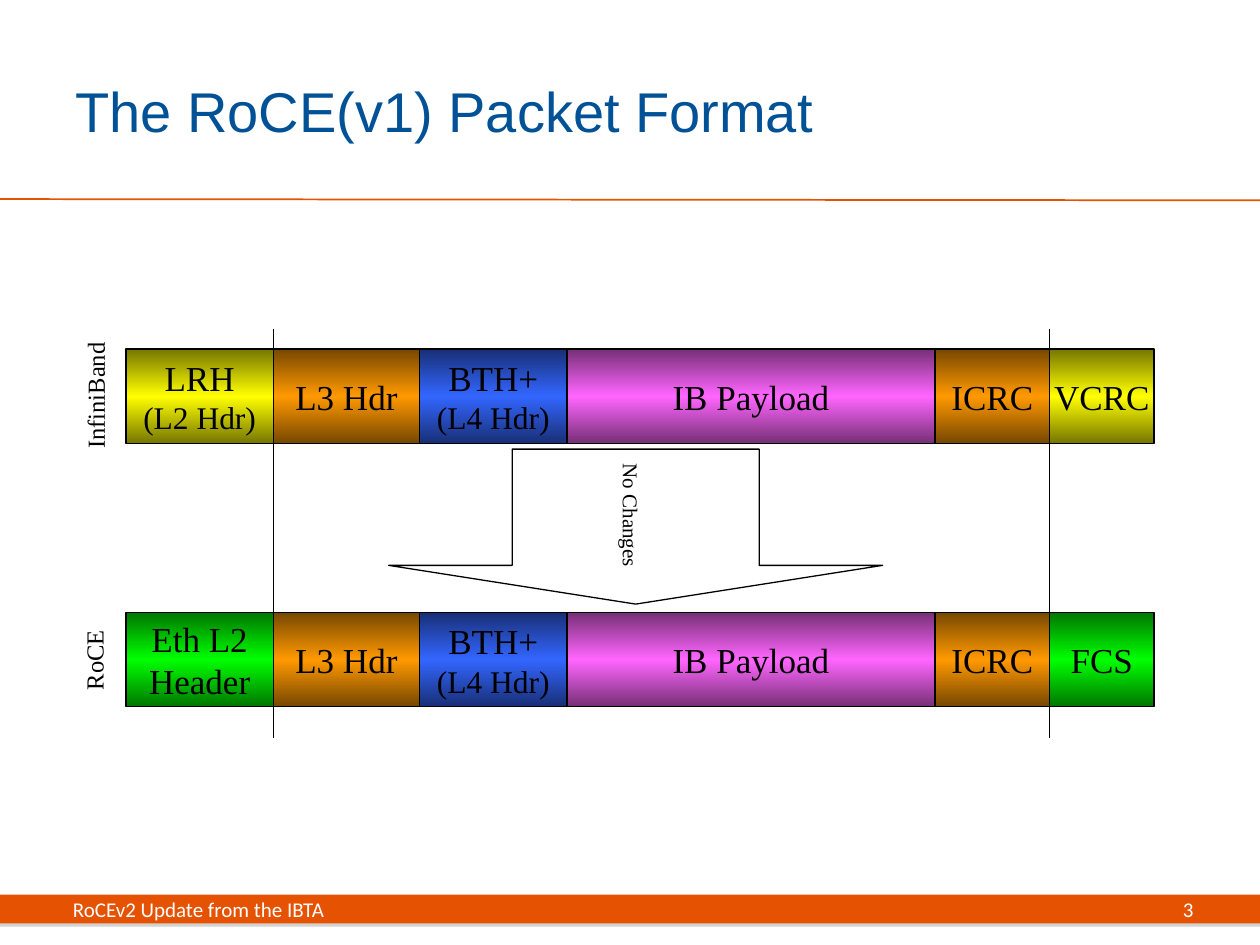
from copy import deepcopy
from lxml import etree
from pptx import Presentation
from pptx import util as u
from pptx.dml import color
from pptx.enum import shapes, text
from pptx.oxml import ns

COLORS = {
    "title": "005195", "accent": "E55302", "black": "000000", "white": "FFFFFF", "shadow": "808080",
    "yellow": ("767600", "FFFF00"), "orange": ("764700", "FF9900"), "blue": ("182F76", "3366FF"),
    "pink": ("762F76", "FF66FF"), "green": ("007600", "00FF00"),
}
SERIF = "Times New Roman"
rgb = color.RGBColor.from_string

prs = Presentation()
prs.slide_width, prs.slide_height = u.Inches(10), u.Inches(7.5)
slide = prs.slides.add_slide(prs.slide_layouts[6])


def write(shape, lines, sizes, font, ink, align, wrap=True):
    frame = shape.text_frame
    frame.text = "\n".join(lines)
    frame.word_wrap = wrap
    frame.vertical_anchor = text.MSO_ANCHOR.MIDDLE
    for paragraph, size in zip(frame.paragraphs, sizes):
        paragraph.alignment = align
        for run in paragraph.runs:
            run.font.size = u.Pt(size)
            run.font.name = font
            run.font.color.rgb = rgb(COLORS[ink])


def rule(x1, y1, x2, y2, ink, width):
    line = slide.shapes.add_connector(shapes.MSO_CONNECTOR.STRAIGHT, *map(u.Inches, (x1, y1, x2, y2)))
    line.line.color.rgb = rgb(COLORS[ink])
    line.line.width = u.Pt(width)
    etree.SubElement(line._element.spPr, ns.qn("a:effectLst"))


footer_bar = slide.shapes.add_shape(shapes.MSO_SHAPE.RECTANGLE, 0, u.Inches(7.1), u.Inches(10), u.Inches(0.23))
footer_bar.fill.solid()
footer_bar.fill.fore_color.rgb = rgb(COLORS["accent"])
footer_bar.line.fill.background()
footer_bar.shadow.inherit = False
effects = footer_bar._element.spPr.find(ns.qn("a:effectLst"))
drop = etree.SubElement(effects, ns.qn("a:outerShdw"), dist=str(u.Pt(1.8)), dir="5400000", rotWithShape="0")
drop_color = etree.SubElement(drop, ns.qn("a:srgbClr"), val=COLORS["shadow"])
etree.SubElement(drop_color, ns.qn("a:alpha"), val="35000")
rule(0, 1.58, 10, 1.59, "accent", 1)

edges = [1, 2.17, 3.33, 4.5, 7.42, 8.33, 9.16]
shared_fields = [
    (["L3 Hdr"], "orange"),
    (["BTH+", "(L4 Hdr)"], "blue"),
    (["IB Payload"], "pink"),
    (["ICRC"], "orange"),
]
packets = [
    (2.77, [(["LRH", "(L2 Hdr)"], "yellow"), *shared_fields, (["VCRC"], "yellow")]),
    (4.86, [(["Eth L2", "Header"], "green"), *shared_fields, (["FCS"], "green")]),
]
for top, fields in packets:
    for left, right, (lines, hue) in zip(edges, edges[1:], fields):
        field = slide.shapes.add_shape(
            shapes.MSO_SHAPE.RECTANGLE, u.Inches(left), u.Inches(top), u.Inches(right - left), u.Inches(0.75))
        field.shadow.inherit = False
        field.fill.gradient()
        field.fill.gradient_angle = 90
        for stop, position, shade in zip(field.fill.gradient_stops, (0, 0.5), COLORS[hue]):
            stop.position = position
            stop.color.rgb = rgb(shade)
        stop_list = field._element.spPr.find(".//" + ns.qn("a:gsLst"))
        last_stop = deepcopy(stop_list[0])
        last_stop.set("pos", "100000")
        stop_list.append(last_stop)
        field.line.color.rgb = rgb(COLORS["black"])
        field.line.width = u.Pt(0.75)
        sizes = (20, 18) if lines[-1].startswith("(") else (20, 20)
        write(field, lines, sizes, SERIF, "black", text.PP_ALIGN.CENTER, wrap=False)

arrow = slide.shapes.add_shape(
    shapes.MSO_SHAPE.RIGHT_ARROW, u.Inches(4.43), u.Inches(2.22), u.Inches(1.23), u.Inches(3.92))
arrow.rotation = 90
arrow.adjustments[0], arrow.adjustments[1] = 0.5, 0.25
arrow.fill.background()
arrow.line.color.rgb = rgb(COLORS["black"])
arrow.line.width = u.Pt(0.75)
arrow.shadow.inherit = False

for x in (edges[1], edges[-2]):
    rule(x, 2.61, x, 5.86, "black", 0.75)

left_align, center, right_align = text.PP_ALIGN.LEFT, text.PP_ALIGN.CENTER, text.PP_ALIGN.RIGHT
labels = [
    ("The RoCE(v1) Packet Format", 0.5, 0.25, 8.17, 1.25, 0, 32, "Arial", "title", left_align),
    ("InfiniBand", 0.06, 2.97, 1.39, 0.34, 270, 14, SERIF, "black", center),
    ("RoCE", 0.16, 5.07, 1.17, 0.34, 270, 14, SERIF, "black", center),
    ("No Changes", 4.47, 3.94, 1.08, 0.3, 90, 12, SERIF, "black", center),
    ("RoCEv2 Update from the IBTA", 0.48, 7.1, 9.05, 0.23, 0, 12, "Calibri", "white", left_align),
    ("3", 8.38, 7.1, 1.19, 0.23, 0, 12, "Calibri", "white", right_align),
]
for words, left, top, width, height, turn, size, font, ink, align in labels:
    label = slide.shapes.add_textbox(*map(u.Inches, (left, top, width, height)))
    label.rotation = turn
    write(label, [words], [size], font, ink, align)

prs.save("out.pptx")
